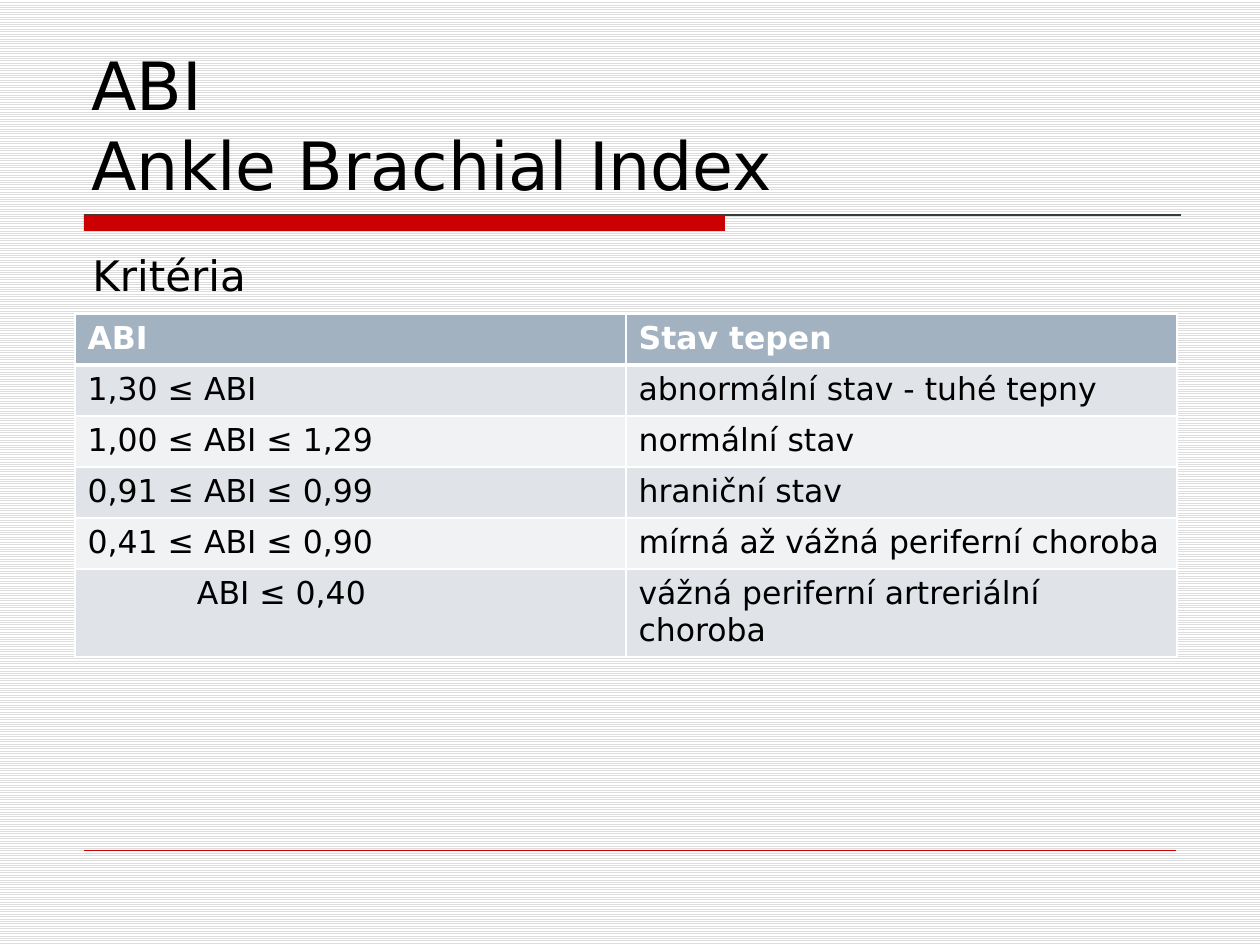
from lxml.etree import SubElement
from pptx import Presentation
from pptx.dml.color import RGBColor
from pptx.enum.dml import MSO_PATTERN
from pptx.enum.shapes import MSO_CONNECTOR, MSO_SHAPE
from pptx.enum.text import MSO_ANCHOR
from pptx.oxml.ns import qn
from pptx.util import Pt

PX = 914400 / 126
FONT = "DejaVu Sans"
BLACK = RGBColor(0x00, 0x00, 0x00)
WHITE = RGBColor(0xFF, 0xFF, 0xFF)
STRIPE = RGBColor(0xDD, 0xDD, 0xDD)
RED = RGBColor(0xCC, 0x00, 0x00)
DARK = RGBColor(0x33, 0x40, 0x38)
HEADER = RGBColor(0xA3, 0xB2, 0xC1)
BANDS = (RGBColor(0xF0, 0xF2, 0xF4), RGBColor(0xE0, 0xE4, 0xE9))

TITLE = {"size": Pt(38), "name": FONT, "bold": False}
BODY = {"size": Pt(24), "name": FONT, "bold": False}
CELL = {"size": Pt(18), "name": FONT, "bold": False}
HEAD = {"size": Pt(18), "name": FONT, "bold": True}

ROWS = (
    ("ABI", "Stav tepen"),
    ("1,30 ≤ ABI", "abnormální stav - tuhé tepny"),
    ("1,00 ≤ ABI ≤ 1,29", "normální stav"),
    ("0,91 ≤ ABI ≤ 0,99", "hraniční stav"),
    ("0,41 ≤ ABI ≤ 0,90", "mírná až vážná periferní choroba"),
    ("ABI ≤ 0,40", "vážná periferní artreriální choroba"),
)


def px(n):
    """Turn whole pixels into EMU."""
    return round(n * PX)


def write(tf, text, style, color):
    """Write one paragraph of styled text."""
    p = tf.paragraphs[0]
    p.text = text
    for r in p.runs:
        for name, value in style.items():
            setattr(r.font, name, value)
        r.font.color.rgb = color


def add_text(s, box, text, style, wrap, anchor):
    """Place a black text box."""
    tf = s.shapes.add_textbox(*map(px, box)).text_frame
    tf.word_wrap = wrap
    tf.vertical_anchor = anchor
    write(tf, text, style, BLACK)


def add_rule(s, x, y, width, color, weight):
    """Draw a flat horizontal rule."""
    line = s.shapes.add_connector(
        MSO_CONNECTOR.STRAIGHT, px(x), px(y), px(x + width), px(y))
    line.line.color.rgb = color
    line.line.width = Pt(weight)
    SubElement(line._element.spPr, qn("a:effectLst"))


def add_divider(s, x, y, width, height):
    """Draw the thin rule with the thick red bar on its left part."""
    add_rule(s, x, y, width, DARK, 0.75)
    bar = s.shapes.add_shape(
        MSO_SHAPE.RECTANGLE, px(x), px(y), px(641), px(height))
    bar.shadow.inherit = False
    bar.fill.solid()
    bar.fill.fore_color.rgb = RED
    bar.line.fill.background()


def set_borders(cell, weights):
    """Give a cell white borders of the given weights in points."""
    tcPr = cell._tc.get_or_add_tcPr()
    for i, (side, weight) in enumerate(weights.items()):
        ln = tcPr.makeelement(qn(f"a:{side}"), {"w": str(Pt(weight))})
        fill = SubElement(ln, qn("a:solidFill"))
        SubElement(fill, qn("a:srgbClr"), val=str(WHITE))
        tcPr.insert(i, ln)


def add_criteria(s, x, y, width, row_height, last_height):
    """Build the table of index ranges and artery states."""
    heights = [row_height] * (len(ROWS) - 1) + [last_height]
    table = s.shapes.add_table(
        len(ROWS), 2, px(x), px(y), px(width), px(sum(heights))).table
    table.first_row = table.horz_banding = False
    for col in table.columns:
        col.width = px(width // 2)
    for i, (texts, height) in enumerate(zip(ROWS, heights)):
        table.rows[i].height = px(height)
        for j, text in enumerate(texts):
            cell = table.cell(i, j)
            cell.fill.solid()
            cell.fill.fore_color.rgb = BANDS[i % 2] if i else HEADER
            write(cell.text_frame, text, CELL if i else HEAD, BLACK if i else WHITE)
            set_borders(cell, {"lnL": 1, "lnR": 1, "lnT": 1 if i != 1 else 3,
                               "lnB": 1 if i else 3})
    table.cell(len(ROWS) - 1, 0).margin_left = px(122)


def main():
    """Build and save the slide."""
    prs = Presentation()
    prs.slide_width, prs.slide_height = px(1260), px(945)
    s = prs.slides.add_slide(prs.slide_layouts[6])
    fill = s.background.fill
    fill.patterned()
    fill.pattern = MSO_PATTERN.LIGHT_HORIZONTAL
    fill.fore_color.rgb, fill.back_color.rgb = STRIPE, WHITE
    add_divider(s, 84, 215, 1097, 16)
    add_rule(s, 84, 850, 1092, RED, 0.25)
    add_text(s, (79, 42, 1103, 168), "ABI\vAnkle Brachial Index",
             TITLE, True, MSO_ANCHOR.BOTTOM)
    add_criteria(s, 75, 314, 1102, 51, 85)
    add_text(s, (80, 243, 181, 63), "Kritéria", BODY, False, MSO_ANCHOR.TOP)
    prs.save("out.pptx")


if __name__ == "__main__":
    main()
